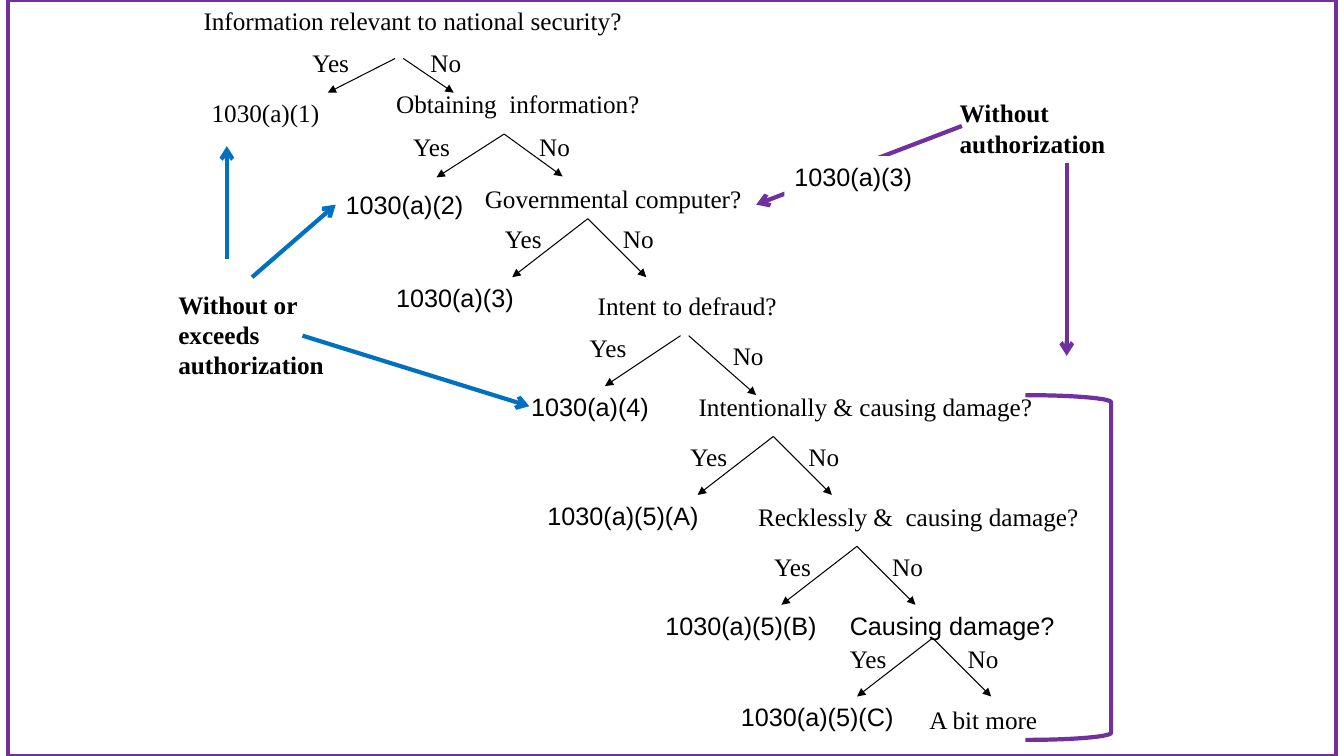
from dataclasses import dataclass

from lxml import etree
from pptx import Presentation
from pptx.dml.color import RGBColor
from pptx.enum.shapes import MSO_CONNECTOR, MSO_SHAPE
from pptx.enum.text import MSO_ANCHOR, MSO_AUTO_SIZE, PP_ALIGN
from pptx.oxml.ns import qn
from pptx.util import Inches, Pt

STRAIGHT = MSO_CONNECTOR.STRAIGHT
RECTANGLE, RIGHT_BRACKET = MSO_SHAPE.RECTANGLE, MSO_SHAPE.RIGHT_BRACKET
TOP, MIDDLE = MSO_ANCHOR.TOP, MSO_ANCHOR.MIDDLE
FIT_SHAPE = MSO_AUTO_SIZE.SHAPE_TO_FIT_TEXT
LEFT = PP_ALIGN.LEFT


@dataclass(frozen=True)
class Theme:
    black: RGBColor = RGBColor.from_string("000000")
    white: RGBColor = RGBColor.from_string("FFFFFF")
    purple: RGBColor = RGBColor.from_string("7030A0")
    blue: RGBColor = RGBColor.from_string("0070C0")
    serif: str = "Times New Roman"
    sans: str = "Arial"
    text_size: float = 18
    thin: float = 0.75
    thick: float = 3
    line_height: float = 0.4


@dataclass(frozen=True)
class Branch:
    """A Yes/No fork; all offsets are measured from its apex."""
    apex: tuple
    yes_tip: tuple = (-0.75, 0.58)
    no_tip: tuple = (0.58, 0.58)
    yes_label: tuple = (-0.92, 0)
    no_label: tuple = (0.25, 0)
    no_start: tuple = (0, 0)


BRANCHES = [
    Branch((3.92, 0.58), (-0.67, 0.34), (0.58, 0.34), (-0.92, -0.16), (0.25, -0.16), (0.08, 0)),
    Branch((5, 1.33), (-0.67, 0.43), (0.58, 0.42), (-1, -0.08), (0.25, -0.08)),
    Branch((5.83, 2.17)),
    Branch((6.75, 3.33), (-0.75, 0.5), (0.75, 0.59), (-1, -0.08), (0.42, 0), (0.08, 0)),
    Branch((7.67, 4.33)),
    Branch((8.5, 5.42)),
    Branch((9.25, 6.33)),
]

# text, left, top, width
SERIF_TEXTS = [
    ("Information relevant to national security?", 1.92, 0, 4.92),
    ("Obtaining  information?", 3.83, 0.83, 3.25),
    ("Governmental computer?", 4.71, 1.77, 3.83),
    ("Intent to defraud?", 5.83, 2.83, 2.17),
    ("Intentionally & causing damage?", 6.83, 3.83, 3.75),
    ("Recklessly &  causing damage?", 7.42, 4.92, 3.67),
    ("A bit more", 9.12, 6.94, 2.25),
    ("1030(a)(1)", 2, 0.92, 1.58),
]
SANS_TEXTS = [
    ("1030(a)(2)", 3.33, 1.83, 1.45),
    ("1030(a)(3)", 3.83, 2.75, 1.44),
    ("1030(a)(4)", 5.17, 3.83, 1.45),
    ("1030(a)(5)(A)", 5.33, 4.91, 1.72),
    ("1030(a)(5)(B)", 6.5, 6, 1.79),
    ("Causing damage?", 8.33, 6, 2.25),
    ("1030(a)(5)(C)", 7.25, 6.91, 1.8),
]
BLUE_ARROWS = [
    ((2.25, 2.57), (2.25, 1.45)),
    ((2.5, 2.75), (3.33, 2.03)),
    ((3, 3.33), (5.25, 4.03)),
]


def shift(point, offset):
    return point[0] + offset[0], point[1] + offset[1]


class SlideBuilder:
    def __init__(self, slide, theme):
        self.slide = slide
        self.theme = theme

    def fill_text(self, shape, text, font_name, bold=False, wrap=True, anchor=TOP):
        frame = shape.text_frame
        frame_format = {"word_wrap": wrap, "auto_size": FIT_SHAPE, "vertical_anchor": anchor}
        for name, value in frame_format.items():
            setattr(frame, name, value)
        paragraph = frame.paragraphs[0]
        paragraph.alignment = LEFT
        run = paragraph.add_run()
        run.text = text
        font_format = {"name": font_name, "size": Pt(self.theme.text_size), "bold": bold}
        for name, value in font_format.items():
            setattr(run.font, name, value)
        run.font.color.rgb = self.theme.black

    def text(self, text, left, top, width, height=None, font_name=None, **options):
        height = height or self.theme.line_height
        box = self.slide.shapes.add_textbox(*map(Inches, (left, top, width, height)))
        self.fill_text(box, text, font_name or self.theme.serif, **options)

    def shape(self, kind, bounds, fill=None, line=None):
        shape = self.slide.shapes.add_shape(kind, *map(Inches, bounds))
        shape.shadow.inherit = False
        if fill is None:
            shape.fill.background()
        else:
            shape.fill.solid()
            shape.fill.fore_color.rgb = fill
        if line is None:
            shape.line.fill.background()
        else:
            shape.line.color.rgb = line
            shape.line.width = Pt(self.theme.thick)
        return shape

    def arrow(self, start, end, color, weight, head):
        connector = self.slide.shapes.add_connector(STRAIGHT, *map(Inches, (*start, *end)))
        connector.line.color.rgb = color
        connector.line.width = Pt(weight)
        properties = connector.element.spPr
        etree.SubElement(properties.find(qn("a:ln")), qn("a:tailEnd"), type=head)
        etree.SubElement(properties, qn("a:effectLst"))

    def thick_arrow(self, start, end, color):
        self.arrow(start, end, color, self.theme.thick, "arrow")

    def branch(self, branch):
        no_start = shift(branch.apex, branch.no_start)
        for start, tip in ((branch.apex, branch.yes_tip), (no_start, branch.no_tip)):
            end = shift(branch.apex, tip)
            self.arrow(start, end, self.theme.black, self.theme.thin, "triangle")
        self.text("Yes", *shift(branch.apex, branch.yes_label), 1.08)
        self.text("No", *shift(branch.apex, branch.no_label), 0.67)


def main():
    presentation = Presentation()
    presentation.slide_width = Inches(13.33)
    presentation.slide_height = Inches(7.5)
    theme = Theme()
    builder = SlideBuilder(presentation.slides.add_slide(presentation.slide_layouts[6]), theme)

    builder.shape(RECTANGLE, (0.08, 0, 13.17, 7.5), theme.white, theme.purple)
    builder.thick_arrow((9.54, 1.25), (7.5, 2.03), theme.purple)

    for branch in BRANCHES:
        builder.branch(branch)
    for entry in SERIF_TEXTS:
        builder.text(*entry)
    for entry in SANS_TEXTS:
        builder.text(*entry, font_name=theme.sans, wrap="damage" in entry[0], anchor=MIDDLE)

    builder.text("Without or exceeds authorization", 1.67, 2.82, 1.67, 1.01, bold=True)
    for start, end in BLUE_ARROWS:
        builder.thick_arrow(start, end, theme.blue)

    builder.text("Without authorization", 9.42, 0.92, 1.67, 0.71, bold=True)
    builder.thick_arrow((10.58, 1.62), (10.58, 3.53), theme.purple)
    builder.shape(RIGHT_BRACKET, (10.17, 3.92, 0.85, 3.42), line=theme.purple)
    code = builder.shape(RECTANGLE, (7.78, 1.55, 1.44, 0.4), theme.white)
    builder.fill_text(code, "1030(a)(3)", theme.sans, wrap=False, anchor=MIDDLE)

    presentation.save("out.pptx")


if __name__ == "__main__":
    main()
